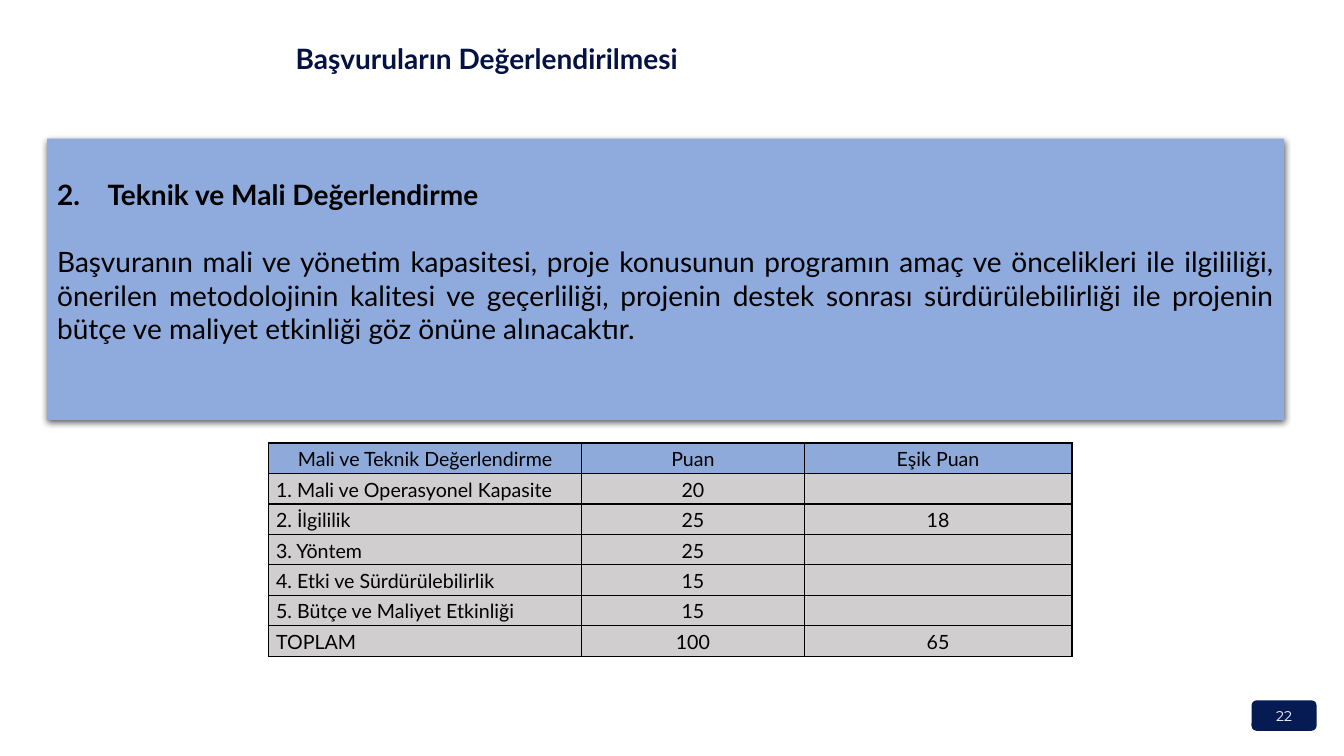
from dataclasses import dataclass

from lxml.etree import SubElement
from pptx import Presentation
from pptx.dml.color import RGBColor
from pptx.enum.shapes import MSO_SHAPE as Shape
from pptx.enum.text import MSO_ANCHOR as Anchor, MSO_AUTO_SIZE as AutoSize, PP_ALIGN as Align
from pptx.oxml import parse_xml
from pptx.oxml.ns import nsdecls, qn
from pptx.util import Emu, Pt

EMU_PER_PX = 9525  # 96 px to the inch

BLACK = RGBColor(0x00, 0x00, 0x00)
WHITE = RGBColor(0xFF, 0xFF, 0xFF)
TITLE_NAVY = RGBColor(0x04, 0x12, 0x43)
BADGE_NAVY = RGBColor(0x06, 0x1A, 0x53)
PANEL_BLUE = RGBColor(0x8F, 0xAA, 0xDC)
HEADER_BLUE = RGBColor(0x8E, 0xAA, 0xDB)
ROW_GRAY = RGBColor(0xD0, 0xCE, 0xCE)


@dataclass(frozen=True)
class Box:
    left: int
    top: int
    width: int
    height: int

    def emu(self) -> list[Emu]:
        return [px(v) for v in (self.left, self.top, self.width, self.height)]


@dataclass(frozen=True)
class TextStyle:
    size: int
    color: RGBColor = BLACK
    bold: bool = False
    name: str = "Lato"


@dataclass(frozen=True)
class Criterion:
    label: str
    points: str
    threshold: str = ""


CRITERIA = [
    Criterion("Mali ve Teknik Değerlendirme", "Puan", "Eşik Puan"),
    Criterion("1. Mali ve Operasyonel Kapasite", "20"),
    Criterion("2. İlgililik", "25", "18"),
    Criterion("3. Yöntem", "25"),
    Criterion("4. Etki ve Sürdürülebilirlik", "15"),
    Criterion("5. Bütçe ve Maliyet Etkinliği", "15"),
    Criterion("TOPLAM", "100", "65"),
]
COLUMN_WIDTHS = (298, 212, 255)
ROW_HEIGHT = 29


def px(value: int) -> Emu:
    return Emu(value * EMU_PER_PX)


def apply_format(target, values: dict) -> None:
    for attribute, value in values.items():
        setattr(target, attribute, value)


def write(paragraph, text: str, style: TextStyle, align=Align.LEFT) -> None:
    paragraph.alignment = align
    font = paragraph.add_run().font
    paragraph.runs[0].text = text
    apply_format(font, {"size": Pt(style.size), "bold": style.bold, "name": style.name})
    font.color.rgb = style.color


def add_block(slide, kind, box: Box, color: RGBColor):
    block = slide.shapes.add_shape(kind, *box.emu())
    block.shadow.inherit = False
    block.fill.solid()
    block.fill.fore_color.rgb = color
    block.line.fill.background()
    return block


def add_title(slide) -> None:
    title = slide.shapes.title
    left, top, width, height = Box(272, 35, 1167, 42).emu()
    apply_format(title, {"left": left, "top": top, "width": width, "height": height})
    apply_format(title.text_frame, {
        "vertical_anchor": Anchor.TOP, "word_wrap": True, "auto_size": AutoSize.NONE})
    write(title.text_frame.paragraphs[0], "Başvuruların Değerlendirilmesi",
          TextStyle(20, TITLE_NAVY, True))


def add_panel(slide) -> None:
    panel = add_block(slide, Shape.RECTANGLE, Box(45, 132, 1178, 268), PANEL_BLUE)
    effects = panel._element.spPr.find(qn("a:effectLst"))
    effects.append(parse_xml(
        f'<a:outerShdw {nsdecls("a")} blurRad="57150" dist="19050" dir="5400000" '
        'algn="ctr" rotWithShape="0"><a:srgbClr val="000000">'
        '<a:alpha val="63000"/></a:srgbClr></a:outerShdw>'))
    frame = panel.text_frame
    apply_format(frame, {
        "vertical_anchor": Anchor.TOP, "word_wrap": True, "margin_top": px(37)})

    # Numbered heading
    heading = frame.paragraphs[0]
    properties = heading._p.get_or_add_pPr()
    properties.set("marL", str(px(48)))
    properties.set("indent", str(px(-48)))
    SubElement(properties, qn("a:buFont"), typeface="+mj-lt")
    SubElement(properties, qn("a:buAutoNum"), type="arabicPeriod", startAt="2")
    write(heading, "Teknik ve Mali Değerlendirme", TextStyle(20, bold=True))

    # Explanation
    explanation = frame.add_paragraph()
    explanation.space_before = Pt(24)
    write(explanation,
          "Başvuranın mali ve yönetim kapasitesi, proje konusunun programın amaç ve "
          "öncelikleri ile ilgililiği, önerilen metodolojinin kalitesi ve geçerliliği, "
          "projenin destek sonrası sürdürülebilirliği ile projenin bütçe ve maliyet "
          "etkinliği göz önüne alınacaktır.",
          TextStyle(20), Align.JUSTIFY)


def format_cell(cell, text: str, color: RGBColor, align) -> None:
    apply_format(cell, {
        "vertical_anchor": Anchor.MIDDLE, "margin_left": px(7), "margin_right": px(7),
        "margin_top": 0, "margin_bottom": 0})
    properties = cell._tc.get_or_add_tcPr()
    for side in ("lnL", "lnR", "lnT", "lnB"):
        border = SubElement(properties, qn(f"a:{side}"), w=str(Pt(1)))
        SubElement(SubElement(border, qn("a:solidFill")), qn("a:srgbClr"), val=str(BLACK))
    cell.fill.solid()
    cell.fill.fore_color.rgb = color
    paragraph = cell.text_frame.paragraphs[0]
    paragraph.line_spacing = 1.07
    if text:
        write(paragraph, text, TextStyle(14), align)
    else:
        SubElement(paragraph._p, qn("a:endParaRPr"), sz="1400")


def add_score_table(slide) -> None:
    box = Box(256, 422, sum(COLUMN_WIDTHS), ROW_HEIGHT * len(CRITERIA))
    scores = slide.shapes.add_table(len(CRITERIA), len(COLUMN_WIDTHS), *box.emu()).table
    apply_format(scores, {"first_row": False, "horz_banding": False})
    for column, width in zip(scores.columns, COLUMN_WIDTHS):
        column.width = px(width)
    for r, criterion in enumerate(CRITERIA):
        color = ROW_GRAY if r else HEADER_BLUE
        entries = (criterion.label, criterion.points, criterion.threshold)
        for c, text in enumerate(entries):
            align = Align.LEFT if r and c == 0 else Align.CENTER
            format_cell(scores.cell(r, c), text, color, align)


def add_page_badge(slide) -> None:
    badge = add_block(slide, Shape.ROUNDED_RECTANGLE, Box(1192, 667, 62, 29), BADGE_NAVY)
    badge.text_frame.vertical_anchor = Anchor.MIDDLE
    write(badge.text_frame.paragraphs[0], "22",
          TextStyle(10, WHITE, name="Montserrat"), Align.CENTER)


def main() -> None:
    deck = Presentation()
    apply_format(deck, {"slide_width": px(1280), "slide_height": px(720)})
    slide = deck.slides.add_slide(deck.slide_layouts.get_by_name("Title Only"))
    add_page_badge(slide)
    add_title(slide)
    add_panel(slide)
    add_score_table(slide)
    deck.save("out.pptx")


if __name__ == "__main__":
    main()
